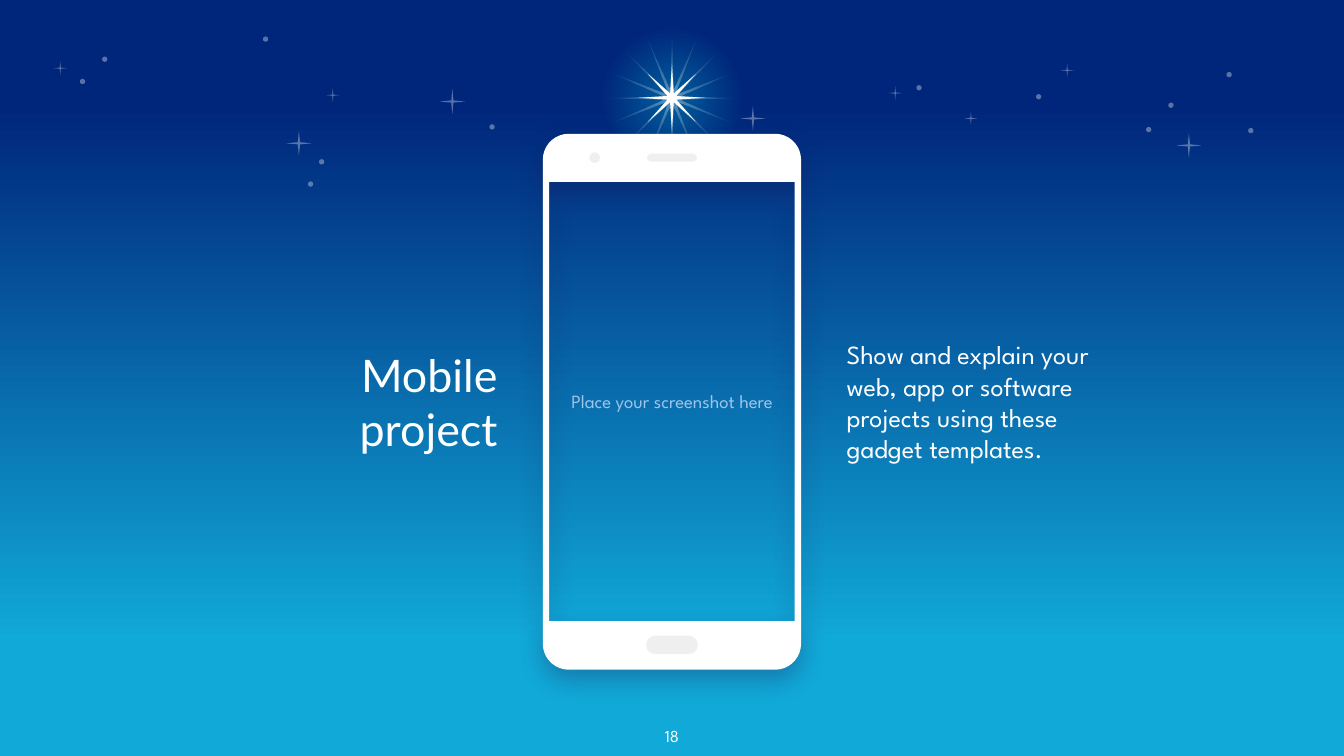
"""Build a slide that presents a mobile project on a phone under a starry sky."""
from copy import deepcopy
from math import cos, radians, sin

from lxml import etree
from pptx import Presentation
from pptx import util as u
from pptx.enum import shapes, text
from pptx.oxml import ns

KIND = shapes.MSO_SHAPE
ALIGN = text.PP_ALIGN
MID = text.MSO_ANCHOR.MIDDLE
TOP = text.MSO_ANCHOR.TOP


def add(host, tag, **attrs):
    return etree.SubElement(host, ns.qn("a:" + tag), **attrs)


def tone(host, color, alpha=100):
    node = add(host, "srgbClr", val=color)
    if alpha < 100:
        add(node, "alpha", val=str(alpha * 1000))


def flat(fill, root, color, alpha=100):
    fill.solid()
    tone(root.find(".//" + ns.qn("a:solidFill")), color, alpha)


def blend(fill, root, stops, disc=False):
    fill.gradient()
    grad = root.find(".//" + ns.qn("a:gradFill"))
    for child in list(grad):
        grad.remove(child)
    row = add(grad, "gsLst")
    for pos, color, alpha in stops:
        tone(add(row, "gs", pos=str(pos * 1000)), color, alpha)
    if disc:
        core = add(grad, "path", path="circle")
        add(core, "fillToRect", l="50000", t="50000", r="50000", b="50000")
    else:
        add(grad, "lin", ang="5400000", scaled="0")


class Deck:
    white = "FFFFFF"
    pale = "EFEFEF"
    face = "League Spartan"

    def __init__(self):
        self.show = Presentation()
        self.show.slide_width = u.Cm(25.4)
        self.show.slide_height = u.Cm(14.29)
        self.slide = self.show.slides.add_slide(self.show.slide_layouts[1])
        self.items = self.slide.shapes

    def sky(self, stops):
        blend(self.slide.background.fill, self.slide.element, stops)

    def finish(self, shape, color, alpha=100, stops=None):
        if stops:
            blend(shape.fill, shape.element, stops, disc=True)
        else:
            flat(shape.fill, shape.element, color, alpha)
        shape.line.fill.background()
        shape.shadow.inherit = False
        return shape

    def mark(self, kind, x, y, wide, high=None, adj=None, color=white, **look):
        high = high or wide
        shape = self.items.add_shape(
            kind, u.Cm(x - wide / 2), u.Cm(y - high / 2), u.Cm(wide), u.Cm(high))
        if adj is not None:
            shape.adjustments[0] = adj
        return self.finish(shape, color, **look)

    def phone(self, x, y, wide, high, bend, screen):
        left, top, width, depth = screen
        right, base = left + width, top + depth
        hole = [(right, top), (right, base), (left, base), (left, top)]
        hubs = [(x + wide - bend, y + high - bend, 0), (x + bend, y + high - bend, 90),
                (x + bend, y + bend, 180), (x + wide - bend, y + bend, 270)]
        edge = [(a + bend * cos(radians(turn + step)), b + bend * sin(radians(turn + step)))
                for a, b, turn in hubs for step in range(0, 91, 10)]
        hole, edge = [[(u.Cm(a), u.Cm(b)) for a, b in ring] for ring in (hole, edge)]
        pen = self.items.build_freeform(*hole[0])
        pen.add_line_segments(hole[1:])
        pen.move_to(*edge[0])
        pen.add_line_segments(edge[1:])
        body = self.finish(pen.convert_to_shape(), self.white)
        glow = body.element.spPr.find(ns.qn("a:effectLst"))
        shade = add(glow, "outerShdw", blurRad=str(u.Pt(13.5)), dist=str(u.Pt(5.2)),
                    dir="5400000", algn="bl", rotWithShape="0")
        tone(shade, "20124D", 29)

    def label(self, words, place, size, box=None, align=ALIGN.LEFT,
              anchor=MID, inset=0, face=face, color=white):
        spot = [u.Cm(v) for v in place]
        box = box or self.items.add_textbox(*spot)
        for name, value in zip(("left", "top", "width", "height"), spot):
            setattr(box, name, value)
        frame = box.text_frame
        form = {"word_wrap": True, "auto_size": text.MSO_AUTO_SIZE.NONE,
                "vertical_anchor": anchor}
        form.update({"margin_" + side: u.Cm(inset)
                     for side in ("left", "top", "right", "bottom")})
        for name, value in form.items():
            setattr(frame, name, value)
        para = frame.paragraphs[0]
        props = para._p.get_or_add_pPr()
        props.set("marL", "0")
        props.set("indent", "0")
        add(props, "buNone")
        para.text = words
        para.alignment = align
        para.space_before = u.Pt(0)
        for run in para.runs:
            flat(run.font.fill, run._r, color)
            for name, value in {"size": u.Pt(size), "name": face}.items():
                setattr(run.font, name, value)
        for gap in para._p.findall(ns.qn("a:br")):
            gap.append(deepcopy(para.runs[0]._r.rPr))


def main():
    deck = Deck()
    deck.sky([(0, "00267B", 100), (14, "00267B", 100),
              (85, "10A9D8", 100), (100, "10A9D8", 100)])

    large = [(22.47, 2.75), (14.23, 2.24), (5.65, 2.71), (8.55, 1.92)]
    small = [(1.14, 1.29), (20.17, 1.33), (16.92, 1.76), (18.35, 2.24), (6.29, 1.8)]
    dots = [(23.64, 2.47), (9.3, 2.4), (21.71, 2.45), (22.13, 1.99),
            (23.23, 1.41), (19.63, 1.83), (17.37, 1.66), (6.08, 3.06),
            (5.87, 3.48), (5.02, 0.74), (1.98, 1.12), (1.56, 1.54)]
    for kind, spots, size, adj in ((KIND.STAR_4_POINT, large, 0.48, 0.06),
                                   (KIND.OVAL, dots, 0.1, None),
                                   (KIND.STAR_4_POINT, small, 0.25, 0.06)):
        for x, y in spots:
            deck.mark(kind, x, y, size, adj=adj, alpha=35)

    mid, high = 12.7, 1.85
    deck.mark(KIND.OVAL, mid, high, 2.74,
              stops=[(0, "00FFFF", 27), (68, "00FFFF", 0), (100, "00FFFF", 0)])
    deck.mark(KIND.STAR_16_POINT, mid, high, 2.74, adj=0.06,
              stops=[(0, "FFFFFF", 35), (69, "FFFFFF", 0), (100, "FFFFFF", 0)])
    deck.mark(KIND.STAR_8_POINT, mid, high, 1.27, adj=0.07)

    head, body = deck.slide.placeholders
    deck.label("Mobile\nproject", (4.95, 2.52, 4.45, 10.13), 24, head,
               align=ALIGN.RIGHT, face="Lato")
    deck.label("Show and explain your web, app or software projects "
               "using these gadget templates.", (16, 2.52, 4.62, 10.13), 14, body)
    deck.label("18", (11.94, 13.46, 1.52, 0.74), 9, align=ALIGN.CENTER,
               anchor=TOP, inset=0.25)
    screen = (10.38, 3.44, 4.64, 8.3)
    deck.label("Place your screenshot here", screen, 10, align=ALIGN.CENTER,
               inset=0.25, color="9FC5E8")

    deck.phone(10.26, 2.53, 4.88, 10.13, 0.49, screen)
    deck.mark(KIND.ROUNDED_RECTANGLE, mid, 12.19, 0.98, 0.35, 0.5, deck.pale)
    deck.mark(KIND.OVAL, 11.24, 2.98, 0.2, color=deck.pale)
    deck.mark(KIND.ROUNDED_RECTANGLE, mid, 2.98, 0.94, 0.15, 0.5, deck.pale)
    deck.show.save("out.pptx")


if __name__ == "__main__":
    main()
